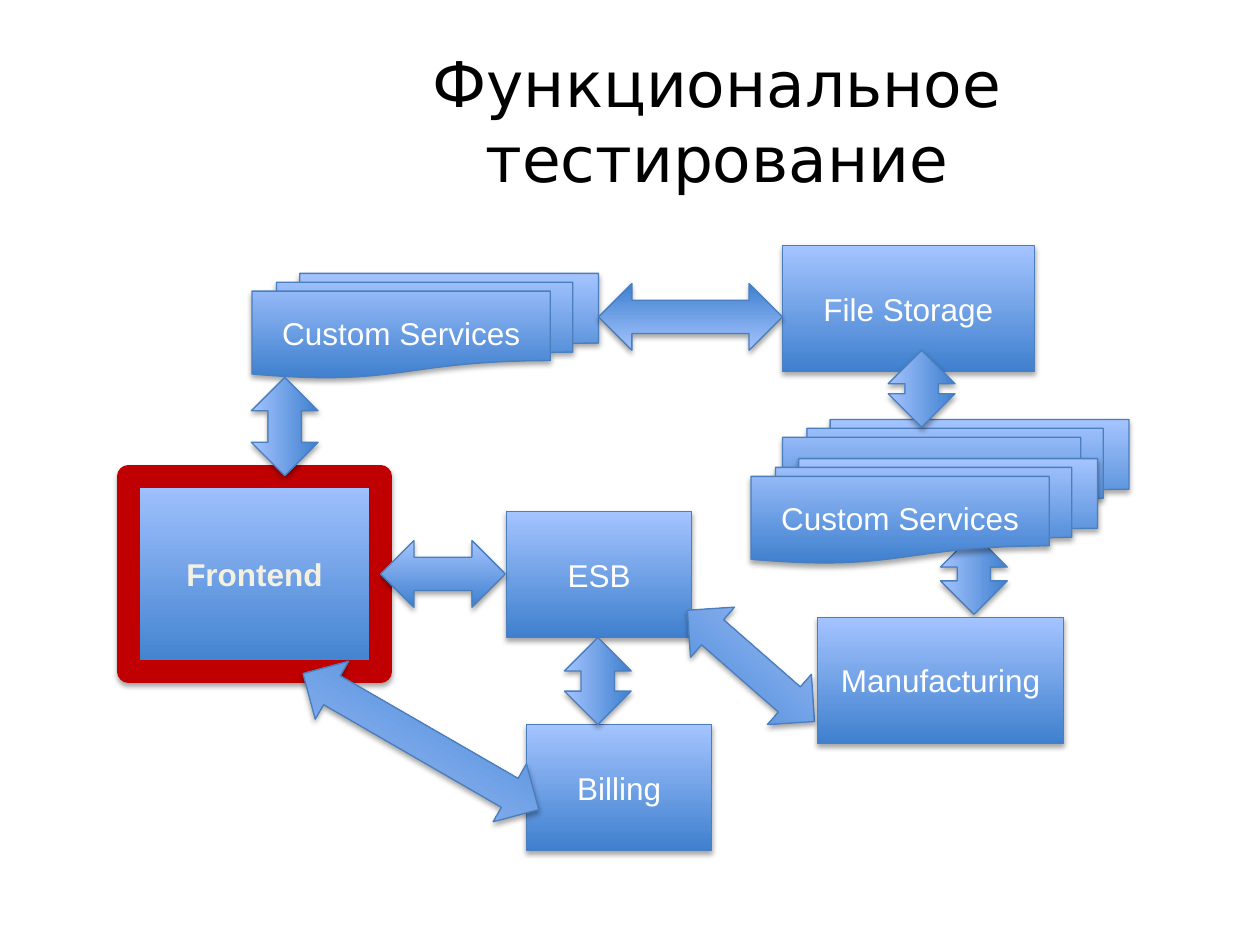
import pptx
import pptx.util
import pptx.dml.color
import pptx.enum.shapes
import pptx.enum.text
import pptx.oxml
import pptx.oxml.ns

Inches = pptx.util.Inches
Pt = pptx.util.Pt
SHAPE = pptx.enum.shapes.MSO_SHAPE
COLORS = {
    "deep": "3F80CE", "light": "A4C4FF", "edge": "4B7EBC", "focus": "C00000",
    "cream": "F4F1E3", "outline": "054697", "white": "FFFFFF", "black": "000000",
}
NAMESPACE = pptx.oxml.ns.nsdecls("a")
SHADOW = (
    f'<a:outerShdw {NAMESPACE} blurRad="{Pt(3.1)}" dist="{Pt(1.8)}" dir="5400000" '
    f'rotWithShape="0"><a:srgbClr val="{COLORS["black"]}"><a:alpha val="35000"/>'
    '</a:srgbClr></a:outerShdw>'
)
TEXT_OUTLINE = (
    f'<a:ln {NAMESPACE} w="{Pt(1)}"><a:solidFill>'
    f'<a:srgbClr val="{COLORS["outline"]}"/></a:solidFill></a:ln>'
)


def rgb(name):
    """Return the named colour."""
    return pptx.dml.color.RGBColor.from_string(COLORS[name])


def write(holder, text, size=18, font="Arial", color="white", bold=False, outlined=False):
    """Put centred text into a shape or text box."""
    frame = holder.text_frame
    frame.word_wrap = True
    frame.vertical_anchor = pptx.enum.text.MSO_ANCHOR.MIDDLE
    paragraph = frame.paragraphs[0]
    paragraph.alignment = pptx.enum.text.PP_ALIGN.CENTER
    run = paragraph.add_run()
    run.text = text
    run.font.size = Pt(size)
    run.font.name = font
    run.font.bold = bold
    run.font.color.rgb = rgb(color)
    if outlined:
        run.font._element.insert(0, pptx.oxml.parse_xml(TEXT_OUTLINE))


def add_block(slide, kind, box, edge="edge", edge_width=0.75):
    """Add a shape with the blue gradient, an edge and a soft shadow."""
    block = slide.shapes.add_shape(kind, *map(Inches, box))
    block.fill.gradient()
    block.fill.gradient_angle = 90
    for stop, position, color in zip(block.fill.gradient_stops, (0, 1), ("deep", "light")):
        stop.position = position
        stop.color.rgb = rgb(color)
    block.line.color.rgb = rgb(edge)
    block.line.width = Pt(edge_width)
    block.shadow.inherit = False
    effects = block._element.spPr.find(pptx.oxml.ns.qn("a:effectLst"))
    effects.append(pptx.oxml.parse_xml(SHADOW))
    return block


def add_title(slide, box):
    """Add the slide heading."""
    heading = slide.shapes.add_textbox(*map(Inches, box))
    write(heading, "Функциональное тестирование", size=36, font="DejaVu Sans", color="black")


def add_system(slide, box, name):
    """Add a rectangle for one system."""
    write(add_block(slide, SHAPE.RECTANGLE, box), name)


def add_frontend(slide, box):
    """Add the highlighted system under test."""
    frontend = add_block(slide, SHAPE.RECTANGLE, box, edge="focus", edge_width=13)
    write(frontend, "Frontend", color="cream", bold=True, outlined=True)


def add_services(slide, left, top):
    """Add a stack of custom services."""
    services = add_block(slide, SHAPE.FLOWCHART_MULTIDOCUMENT, (left, top, 2.75, 0.83))
    write(services, "Custom Services")


def add_exchange(slide, left, top, length, rotation=0):
    """Add a two-way arrow between systems."""
    exchange = add_block(slide, SHAPE.LEFT_RIGHT_ARROW, (left, top, length, 0.53))
    exchange.rotation = rotation


def add_architecture(slide, box):
    """Place the systems and their exchanges from back to front."""
    left, top, width, height = box

    def system(x, y, system_width, name):
        add_system(slide, (left + x, top + y, system_width, 1), name)

    def services(x, y):
        add_services(slide, left + x, top + y)

    def exchange(x, y, length, rotation=0):
        add_exchange(slide, left + x, top + y, length, rotation)

    add_frontend(slide, (left + 0.02, top + 1.83, 2, 1.55))
    system(3.02, 2.11, 1.47, "ESB")
    exchange(2.02, 2.34, 0.99)
    system(5.21, 0, 2, "File Storage")
    services(1, 0.22)
    services(5.21, 1.38)
    exchange(0.87, 1.17, 0.78, 270)
    exchange(3.75, 0.3, 1.46, 180)
    exchange(6.41, 2.34, 0.64, 270)
    exchange(4.29, 3.07, 1.34, 41.2)
    services(4.96, 1.69)
    exchange(6.01, 0.87, 0.61, 270)
    system(3.18, 3.8, 1.47, "Billing")
    exchange(3.4, 3.19, 0.69, 270)
    exchange(1.26, 3.67, 2.16, 210)
    system(5.49, 2.95, 1.95, "Manufacturing")


def main():
    """Build and save the slide."""
    deck = pptx.Presentation()
    deck.slide_width = Inches(10)
    deck.slide_height = Inches(7.5)
    slide = deck.slides.add_slide(deck.slide_layouts[6])
    add_title(slide, (2.13, 0.3, 7.12, 1.3))
    add_architecture(slide, (1, 1.95, 8, 4.8))
    deck.save("out.pptx")


if __name__ == "__main__":
    main()
